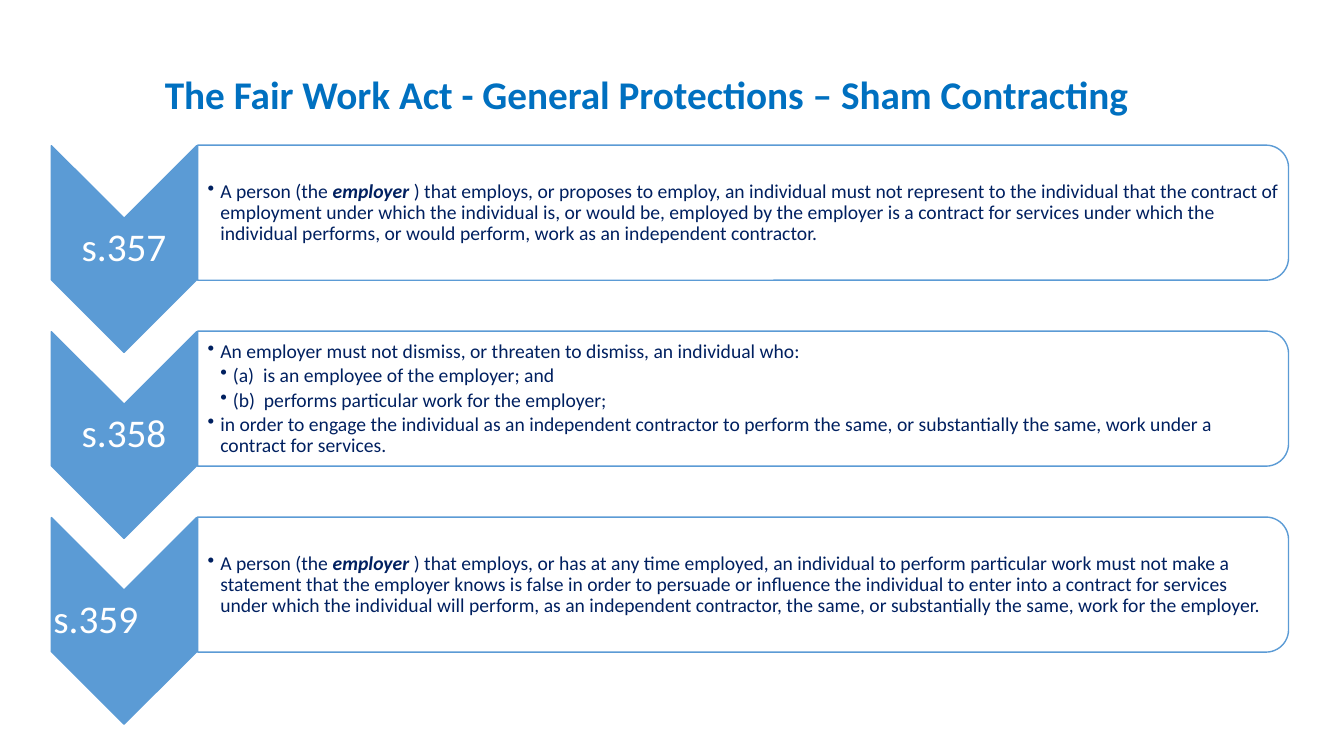
from dataclasses import dataclass

from lxml import etree
from pptx import Presentation
from pptx.dml.color import RGBColor
from pptx.enum.shapes import MSO_SHAPE
from pptx.enum.text import MSO_ANCHOR, MSO_AUTO_SIZE, PP_ALIGN
from pptx.oxml.ns import qn
from pptx.util import Inches, Pt

CHEVRON = MSO_SHAPE.CHEVRON
ROUNDED_END = MSO_SHAPE.ROUND_2_SAME_RECTANGLE
MIDDLE = MSO_ANCHOR.MIDDLE
NO_AUTOFIT = MSO_AUTO_SIZE.NONE
CENTER = PP_ALIGN.CENTER
LEFT = PP_ALIGN.LEFT

TITLE_BLUE = RGBColor(0x00, 0x70, 0xC0)
CHEVRON_BLUE = RGBColor(0x5B, 0x9B, 0xD5)
NAVY = RGBColor(0x00, 0x20, 0x60)
WHITE = RGBColor(0xFF, 0xFF, 0xFF)

FONT = "Calibri"
TITLE_ONLY_LAYOUT = 5
FIRST_TOP = 1.44
ROW_PITCH = 1.845
HANGING = 0.125


@dataclass(frozen=True)
class Span:
    text: str
    emphasis: bool = False


@dataclass(frozen=True)
class Point:
    spans: tuple[Span, ...]
    level: int = 0


@dataclass(frozen=True)
class Section:
    label: str
    points: tuple[Point, ...]
    label_align: PP_ALIGN = CENTER


SECTIONS = (
    Section("s.357", (
        Point((
            Span("A person (the "),
            Span("employer ", emphasis=True),
            Span(") that employs, or proposes to employ, an individual must not represent "
                 "to the individual that the contract of employment under which the "
                 "individual is, or would be, employed by the employer is a contract for "
                 "services under which the individual performs, or would perform, work as "
                 "an independent contractor."),
        )),
    )),
    Section("s.358", (
        Point((Span("An employer must not dismiss, or threaten to dismiss, "
                    "an individual who:"),)),
        Point((Span("(a)  is an employee of the employer; and"),), level=1),
        Point((Span("(b)  performs particular work for the employer;"),), level=1),
        Point((Span("in order to engage the individual as an independent contractor to "
                    "perform the same, or substantially the same, work under a contract "
                    "for services."),)),
    )),
    Section("s.359", (
        Point((
            Span("A person (the "),
            Span("employer ", emphasis=True),
            Span(") that employs, or has at any time employed, an individual to perform "
                 "particular work must not make a statement that the employer knows is "
                 "false in order to persuade or influence the individual to enter into a "
                 "contract for services under which the individual will perform, as an "
                 "independent contractor, the same, or substantially the same, work for "
                 "the employer."),
        )),
    ), label_align=LEFT),
)


def add_span(para, text: str, *, size: float, color: RGBColor,
             bold: bool = False, italic: bool = False) -> None:
    span = para.add_run()
    span.text = text
    span.font.name = FONT
    span.font.size = Pt(size)
    span.font.bold = bold
    span.font.italic = italic
    span.font.color.rgb = color


def add_bullet(para, level: int) -> None:
    para.level = level
    properties = para._p.get_or_add_pPr()
    properties.set("marL", str(Inches(HANGING * (level + 1))))
    properties.set("indent", str(-Inches(HANGING)))
    etree.SubElement(properties, qn("a:buChar")).set("char", "•")


def add_turned_shape(page, kind: MSO_SHAPE, center_x: float, center_y: float,
                     length: float, breadth: float, fill: RGBColor):
    shape = page.shapes.add_shape(
        kind, Inches(center_x - length / 2), Inches(center_y - breadth / 2),
        Inches(length), Inches(breadth))
    shape.rotation = 90
    shape.shadow.inherit = False
    shape.fill.solid()
    shape.fill.fore_color.rgb = fill
    shape.line.color.rgb = CHEVRON_BLUE
    shape.line.width = Pt(1)
    return shape


def add_frame(page, left: float, top: float, width: float, height: float,
              *, inset: float, left_inset: float):
    box = page.shapes.add_textbox(Inches(left), Inches(top), Inches(width), Inches(height))
    frame = box.text_frame
    frame.word_wrap = True
    frame.vertical_anchor = MIDDLE
    frame.margin_left = Inches(left_inset)
    frame.margin_top = frame.margin_right = frame.margin_bottom = Inches(inset)
    return frame


def add_title(page) -> None:
    title = page.shapes.title
    title.left, title.top = Inches(0.4), Inches(0.07)
    title.width, title.height = Inches(12.02), Inches(1.78)
    frame = title.text_frame
    frame.auto_size = NO_AUTOFIT
    frame.vertical_anchor = MIDDLE
    para = frame.paragraphs[0]
    para.alignment = CENTER
    para.line_spacing = 0.9
    add_span(para, "The Fair Work Act - General Protections – Sham Contracting",
             size=28, color=TITLE_BLUE, bold=True)


def add_section(page, section: Section, top: float) -> None:
    add_turned_shape(page, CHEVRON, 1.23, top + 1.03, 2.05, 1.44, CHEVRON_BLUE)
    label = add_frame(page, 0.51, top + 0.72, 1.44, 0.62, inset=0.02, left_inset=0.02)
    para = label.paragraphs[0]
    para.alignment = section.label_align
    para.line_spacing = 0.9
    add_span(para, section.label, size=28, color=WHITE)

    panel = add_turned_shape(page, ROUNDED_END, 7.37, top + 0.67, 1.34, 10.82, WHITE)
    color = panel.fill._xPr.find(qn("a:solidFill"))[0]
    etree.SubElement(color, qn("a:alpha")).set("val", "90000")

    frame = add_frame(page, 1.95, top + 0.07, 10.75, 1.21, inset=0.01, left_inset=0.11)
    for index, point in enumerate(section.points):
        para = frame.add_paragraph() if index else frame.paragraphs[0]
        para.alignment = LEFT
        para.line_spacing = 0.9
        para.space_after = Pt(2.1)
        add_bullet(para, point.level)
        for span in point.spans:
            add_span(para, span.text, size=14, color=NAVY,
                     bold=span.emphasis, italic=span.emphasis)


def main() -> None:
    deck = Presentation()
    deck.slide_width, deck.slide_height = Inches(13.33), Inches(7.5)
    page = deck.slides.add_slide(deck.slide_layouts[TITLE_ONLY_LAYOUT])
    add_title(page)
    for row, section in enumerate(SECTIONS):
        add_section(page, section, FIRST_TOP + row * ROW_PITCH)
    deck.save("out.pptx")


if __name__ == "__main__":
    main()
